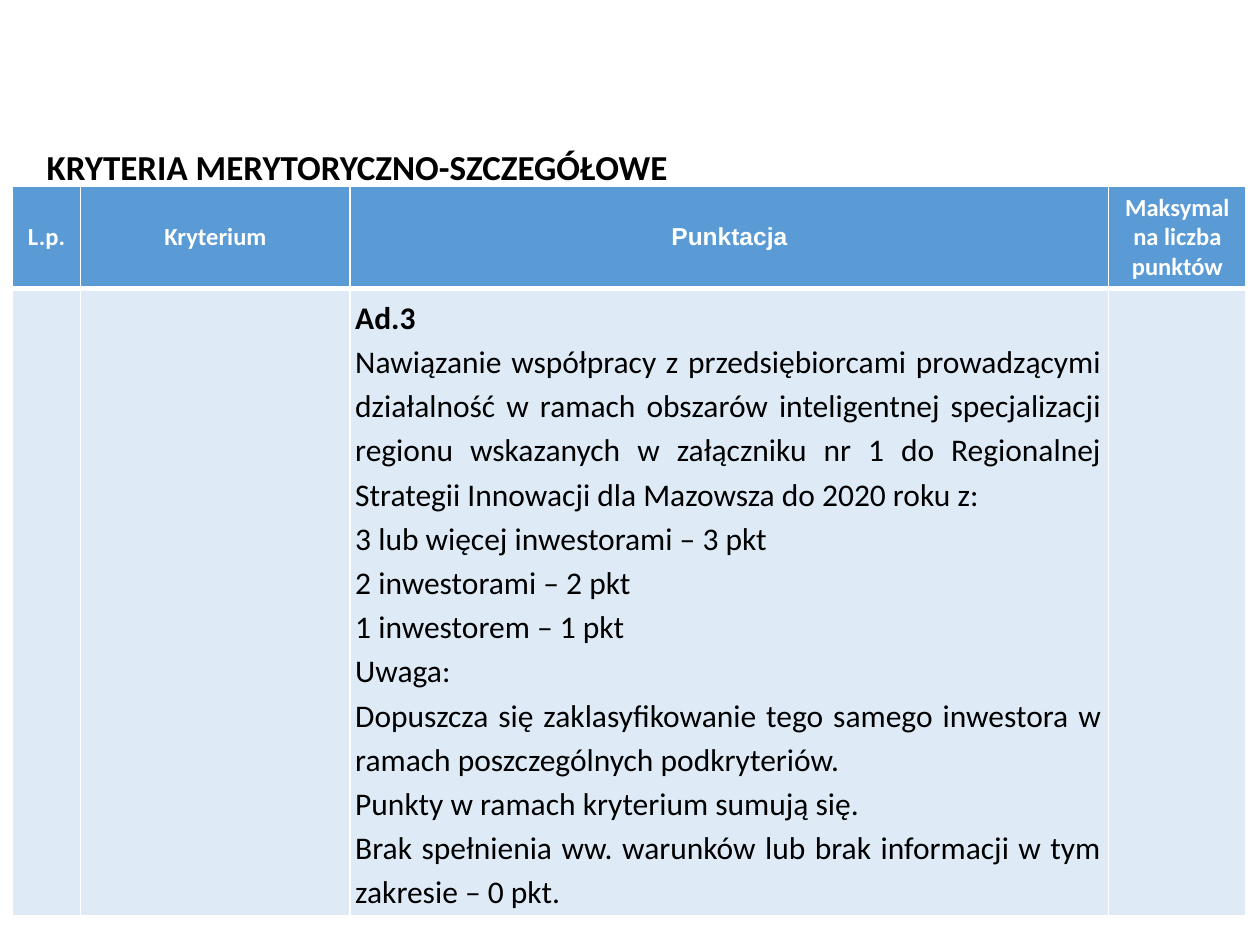
from lxml.etree import SubElement
from pptx import Presentation
from pptx.dml.color import RGBColor
from pptx.enum.text import MSO_ANCHOR, MSO_AUTO_SIZE, PP_ALIGN
from pptx.oxml.ns import qn
from pptx.util import Inches, Pt

theme = {
    "head": "5B9BD5", "body": "DEEBF7", "line": "FFFFFF", "ink": "000000",
    "title": 20, "label": 14, "text": 18,
    "font": "Calibri", "alt": "Arial",
}


def style(par, size, color, bold, face=theme["font"]):
    par.font.size = Pt(size)
    par.font.color.rgb = RGBColor.from_string(theme[color])
    par.font.bold = bold
    par.font.name = face


def paint(cell, fill, base):
    """Draw the cell's borders, then its fill."""
    props = cell._tc.get_or_add_tcPr()
    for side, width in (("L", 1), ("R", 1), ("T", base[0]), ("B", base[1])):
        line = SubElement(props, qn(f"a:ln{side}"), w=str(Pt(width)))
        solid = SubElement(line, qn("a:solidFill"))
        SubElement(solid, qn("a:srgbClr"), val=theme["line"])
    cell.fill.solid()
    cell.fill.fore_color.rgb = RGBColor.from_string(theme[fill])
    cell.vertical_anchor = MSO_ANCHOR.MIDDLE


deck = Presentation()
deck.slide_width, deck.slide_height = Inches(10), Inches(7.5)
slide = deck.slides.add_slide(deck.slide_layouts[5])

# Title
title = slide.shapes.title
title.left, title.top = Inches(0.27), Inches(1.1)
title.width, title.height = Inches(5.17), Inches(0.44)
frame = title.text_frame
frame.text = "KRYTERIA MERYTORYCZNO-SZCZEGÓŁOWE"
frame.word_wrap = False
frame.auto_size = MSO_AUTO_SIZE.SHAPE_TO_FIT_TEXT
frame.vertical_anchor = MSO_ANCHOR.MIDDLE
frame.paragraphs[0].alignment = PP_ALIGN.LEFT
style(frame.paragraphs[0], theme["title"], "ink", True)

# Table grid, with the body row tall enough for all the rules
cols = [0.54, 2.14, 6.02, 1.09]
rows = [0.81, 4.98]
table = slide.shapes.add_table(
    len(rows), len(cols), Inches(0.1), Inches(1.48),
    Inches(sum(cols)), Inches(sum(rows))).table
for col, width in zip(table.columns, cols):
    col.width = Inches(width)
for row, height in zip(table.rows, rows):
    row.height = Inches(height)

# Header row, with a thick rule below it
heads = ["L.p.", "Kryterium", "Punktacja", "Maksymalna liczba punktów"]
for spot, text in enumerate(heads):
    cell = table.cell(0, spot)
    cell.text = text
    paint(cell, "head", (1, 3))
    paint(table.cell(1, spot), "body", (3, 1))
    par = cell.text_frame.paragraphs[0]
    par.alignment = PP_ALIGN.CENTER
    face = theme["alt"] if text == "Punktacja" else theme["font"]
    style(par, theme["label"], "line", True, face)

# Scoring rules
rules = [
    "Ad.3",
    "Nawiązanie współpracy z przedsiębiorcami prowadzącymi działalność "
    "w ramach obszarów inteligentnej specjalizacji regionu wskazanych "
    "w załączniku nr 1 do Regionalnej Strategii Innowacji dla Mazowsza "
    "do 2020 roku z:",
    "3 lub więcej inwestorami – 3 pkt",
    "2 inwestorami – 2 pkt",
    "1 inwestorem – 1 pkt",
    "Uwaga:",
    "Dopuszcza się zaklasyfikowanie tego samego inwestora "
    "w ramach poszczególnych podkryteriów.",
    "Punkty w ramach kryterium sumują się.",
    "Brak spełnienia ww. warunków lub brak informacji "
    "w tym zakresie – 0 pkt.",
]
cell = table.cell(1, 2)
cell.margin_left, cell.margin_right = Inches(0.04), Inches(0.06)
cell.margin_top = cell.margin_bottom = Inches(0.04)
cell.text = "\n".join(rules)
for spot, par in enumerate(cell.text_frame.paragraphs):
    par.alignment = PP_ALIGN.JUSTIFY
    par.line_spacing = 1.15
    style(par, theme["text"], "ink", spot == 0)

deck.save("out.pptx")
